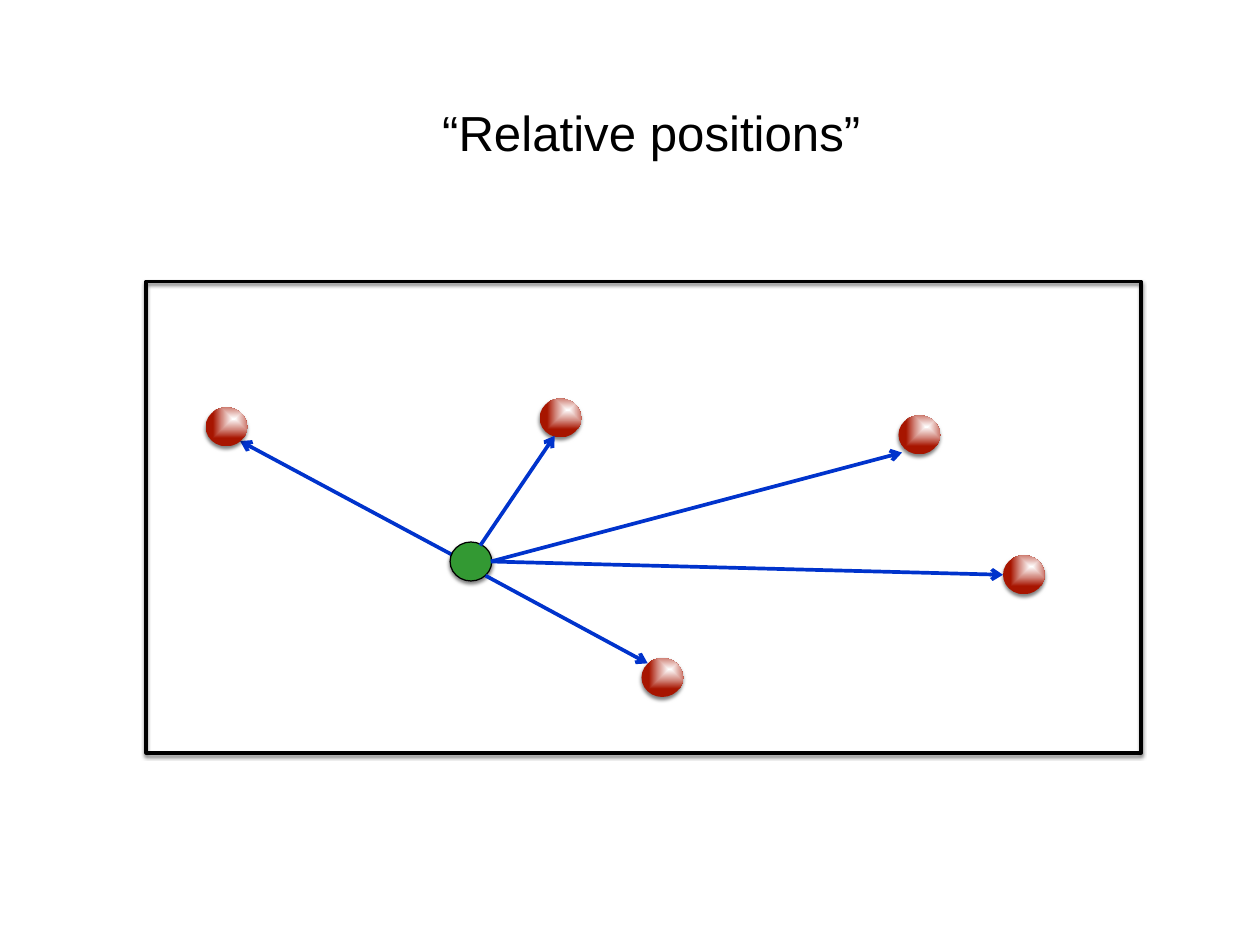
from lxml import etree
from pptx import Presentation
from pptx.dml.color import RGBColor
from pptx.enum.shapes import MSO_CONNECTOR as Connector, MSO_SHAPE as Shape
from pptx.enum.text import MSO_ANCHOR as Anchor, MSO_AUTO_SIZE as AutoSize, PP_ALIGN as Align
from pptx.oxml import parse_xml
from pptx.oxml.ns import nsdecls, qn
from pptx.util import Inches, Pt

BLACK = RGBColor(0x00, 0x00, 0x00)
WHITE = RGBColor(0xFF, 0xFF, 0xFF)
PINK = RGBColor(0xD3, 0x8A, 0x80)
RED = RGBColor(0xA7, 0x15, 0x00)
GREEN = RGBColor(0x33, 0x99, 0x33)
BLUE = RGBColor(0x00, 0x33, 0xCC)

BALL_WIDTH, BALL_HEIGHT = 0.47, 0.44
CENTRE_BALL = (3.43, 2.94)
RED_BALLS = [(0.67, 1.42), (4.44, 1.32), (8.49, 1.51), (9.67, 3.09), (5.59, 4.25)]
REAR_ARROW = ((3.65, 3.19), (1.06, 1.8))
FRONT_ARROWS = [
    ((3.77, 2.98), (4.61, 1.74)),
    ((3.89, 3.16), (8.53, 1.93)),
    ((3.89, 3.16), (9.67, 3.31)),
    ((3.83, 3.32), (5.66, 4.31)),
]


def add_shadow(shape):
    shape.shadow.inherit = False
    effects = shape._element.spPr.find(qn("a:effectLst"))
    effects.append(parse_xml(
        f'<a:outerShdw {nsdecls("a")} blurRad="{Pt(3)}" dist="{Pt(2)}" dir="5400000" '
        f'rotWithShape="0"><a:srgbClr val="{BLACK}"><a:alpha val="50000"/></a:srgbClr>'
        '</a:outerShdw>'))


def fill_with_shine(shape):
    stops = "".join(
        f'<a:gs pos="{position * 1000}"><a:srgbClr val="{color}"/></a:gs>'
        for position, color in [(0, WHITE), (54, PINK), (100, RED)])
    gradient = parse_xml(
        f'<a:gradFill {nsdecls("a")} rotWithShape="1"><a:gsLst>{stops}</a:gsLst>'
        '<a:path path="shape"><a:fillToRect l="68000" t="29000" r="32000" b="71000"/>'
        '</a:path></a:gradFill>')
    shape._element.spPr.find(qn("a:prstGeom")).addnext(gradient)


def add_ball(page, left, top):
    ball = page.shapes.add_shape(
        Shape.OVAL, Inches(left), Inches(top), Inches(BALL_WIDTH), Inches(BALL_HEIGHT))
    add_shadow(ball)
    return ball


def add_arrow(page, left, top, start, tip):
    arrow = page.shapes.add_connector(
        Connector.STRAIGHT, Inches(left + start[0]), Inches(top + start[1]),
        Inches(left + tip[0]), Inches(top + tip[1]))
    arrow.line.color.rgb = BLUE
    arrow.line.width = Pt(3)
    etree.SubElement(arrow.line._get_or_add_ln(), qn("a:tailEnd"), type="arrow")
    etree.SubElement(arrow._element.spPr, qn("a:effectLst"))


def add_title(page, left, top, width, height):
    box = page.shapes.add_textbox(Inches(left), Inches(top), Inches(width), Inches(height))
    frame = box.text_frame
    frame.word_wrap = False
    frame.auto_size = AutoSize.SHAPE_TO_FIT_TEXT
    frame.vertical_anchor = Anchor.TOP
    frame.margin_left = frame.margin_right = Inches(0.14)
    frame.margin_top = frame.margin_bottom = Inches(0.07)
    para = frame.paragraphs[0]
    para.alignment = Align.CENTER
    span = para.add_run()
    span.text = "“Relative positions”"
    span.font.name = "Arial"
    span.font.size = Pt(40)
    span.font.color.rgb = BLACK


def add_diagram(page, left, top, width, height):
    add_arrow(page, left, top, *REAR_ARROW)
    for x, y in RED_BALLS:
        ball = add_ball(page, left + x, top + y)
        fill_with_shine(ball)
        ball.line.fill.background()
    centre = add_ball(page, left + CENTRE_BALL[0], top + CENTRE_BALL[1])
    centre.fill.solid()
    centre.fill.fore_color.rgb = GREEN
    centre.line.color.rgb = BLACK
    centre.line.width = Pt(1)
    for start, tip in FRONT_ARROWS:
        add_arrow(page, left, top, start, tip)
    border = page.shapes.add_shape(
        Shape.RECTANGLE, Inches(left), Inches(top), Inches(width), Inches(height))
    border.fill.background()
    border.line.color.rgb = BLACK
    border.line.width = Pt(3)
    add_shadow(border)


def main():
    deck = Presentation()
    deck.slide_width = Inches(14.22)
    deck.slide_height = Inches(10.67)
    page = deck.slides.add_slide(deck.slide_layouts[6])
    add_title(page, 4.82, 1.09, 5.06, 0.82)
    add_diagram(page, 1.65, 3.18, 11.23, 5.32)
    deck.save("out.pptx")


if __name__ == "__main__":
    main()
